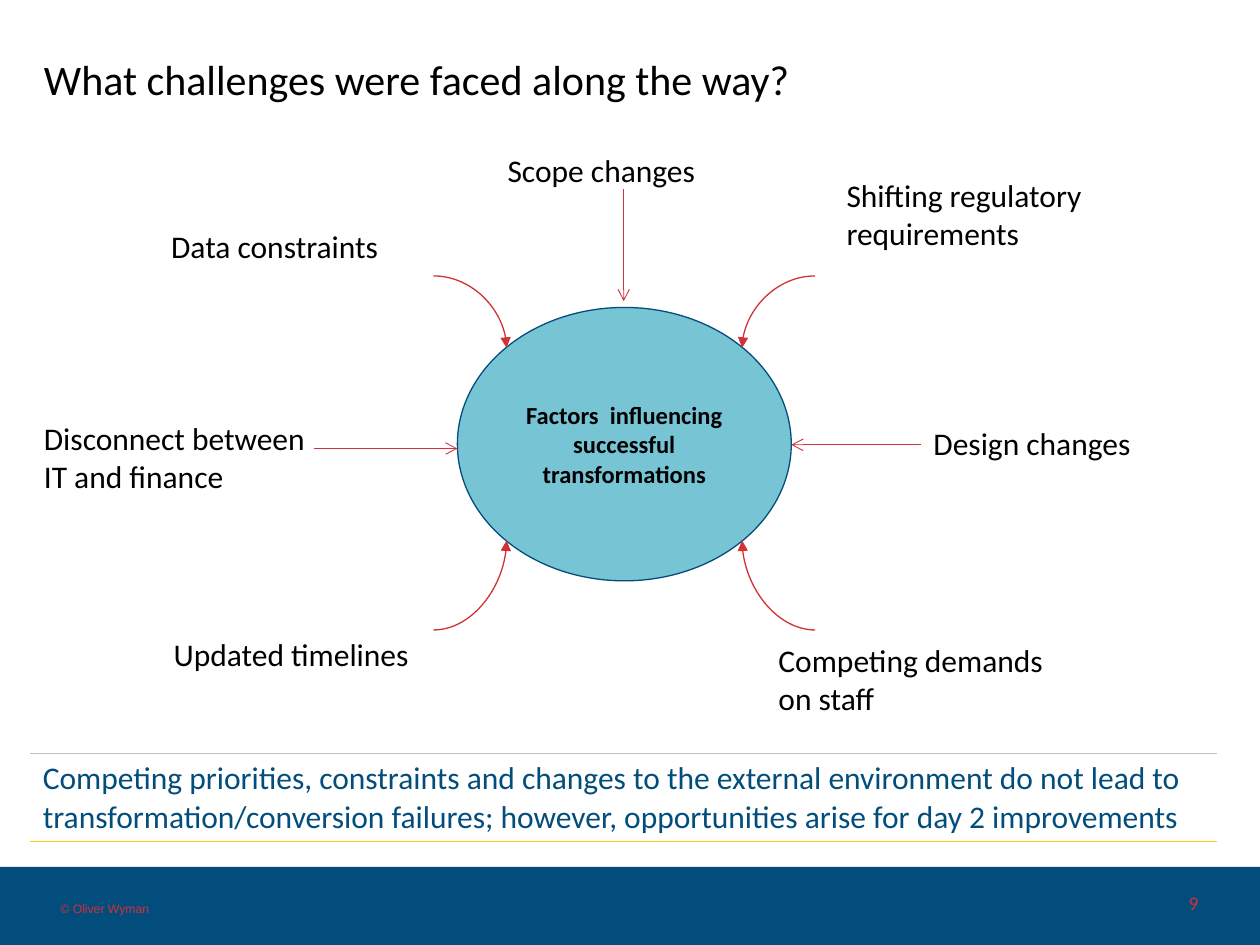
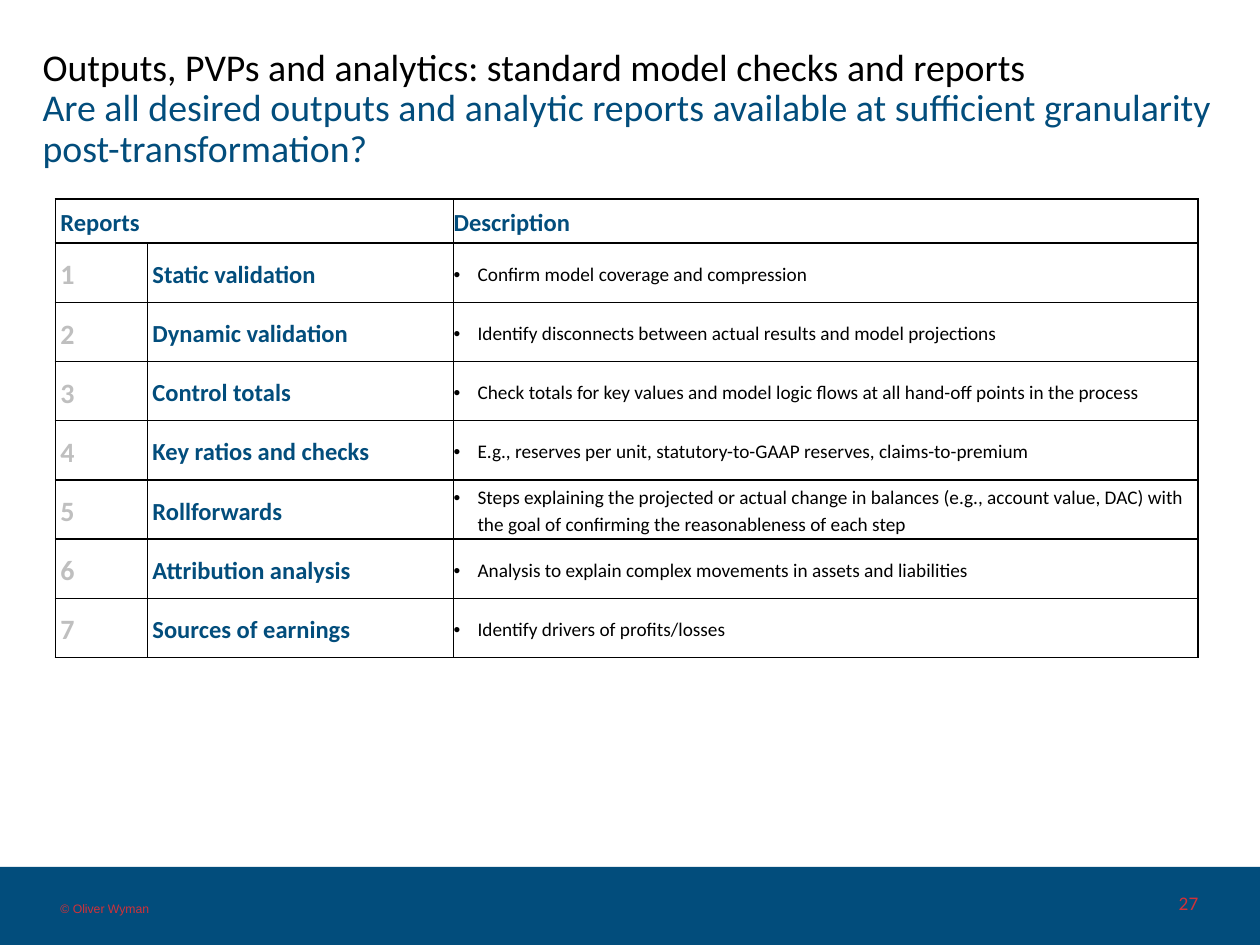
from lxml.etree import SubElement
from pptx import Presentation
from pptx.dml.color import RGBColor
from pptx.enum.shapes import MSO_CONNECTOR, MSO_SHAPE
from pptx.enum.text import MSO_ANCHOR, PP_ALIGN
from pptx.oxml.ns import qn
from pptx.util import Inches, Pt

COLORS = {
    "black": "000000", "navy": "024D7C", "teal": "77C4D5", "red": "D23138",
    "gray": "BFBFBF", "yellow": "FDCE07",
}
# Each style: font values, colour and paragraph values
STYLES = {
    "title": ({"size": Pt(24)}, "black", {"line_spacing": 0.9}),
    "long title": ({"size": Pt(21.6)}, "black", {"line_spacing": 0.9}),
    "subtitle": ({"size": Pt(21.6)}, "navy", {"line_spacing": 0.9}),
    "label": ({"size": Pt(18)}, "black", {}),
    "takeaway": ({"size": Pt(18)}, "navy", {}),
    "hub": ({"size": Pt(14), "bold": True}, "black", {"alignment": PP_ALIGN.CENTER}),
    "page": ({"size": Pt(11)}, "red", {"alignment": PP_ALIGN.RIGHT}),
    "copyright": ({"size": Pt(7), "name": "Arial"}, "red", {}),
    "heading": ({"size": Pt(14), "bold": True}, "navy", {"line_spacing": 1.15}),
    "number": ({"size": Pt(16), "bold": True}, "gray",
               {"line_spacing": 1.15, "space_before": Pt(2), "space_after": Pt(2)}),
    "bullet": ({"size": Pt(11)}, "black", {"line_spacing": 1.15}),
}
SIDES = ("left", "top", "right", "bottom")


def rgb(color):
    return RGBColor.from_string(COLORS[color])


def set_all(obj, values):
    for name, value in values.items():
        setattr(obj, name, value)


class Deck:
    def __init__(self):
        self.prs = Presentation()
        self.prs.slide_width, self.prs.slide_height = Inches(10), Inches(7.5)
        self.s = None

    def slide(self, number):
        self.s = self.prs.slides.add_slide(self.prs.slide_layouts[6])
        # Footer band, page number and copyright
        self.shape(MSO_SHAPE.RECTANGLE, (0, 6.88, 10, 0.62), "navy")
        self.text((8.89, 7.08, 0.62, 0.18), [(number, "page")], MSO_ANCHOR.BOTTOM, 0)
        self.text((0.48, 7.15, 0.75, 0.12), [("© Oliver Wyman", "copyright")],
                  MSO_ANCHOR.BOTTOM, 0, wrap=False)

    def fill_text(self, tf, runs):
        p = tf.paragraphs[0]
        set_all(p, STYLES[runs[0][1]][2])
        for i, (text, style) in enumerate(runs):
            if i:
                p.add_line_break()
            r = p.add_run()
            r.text = text
            font, color, _ = STYLES[style]
            set_all(r.font, {"name": "Calibri", "bold": False, **font})
            r.font.color.rgb = rgb(color)
        return p

    def text(self, box, runs, anchor=MSO_ANCHOR.TOP, inset=None, wrap=True):
        tf = self.s.shapes.add_textbox(*map(Inches, box)).text_frame
        set_all(tf, {"word_wrap": wrap, "vertical_anchor": anchor})
        if inset is not None:
            set_all(tf, {f"margin_{side}": Inches(inset) for side in SIDES})
        self.fill_text(tf, runs)

    def shape(self, kind, box, fill, line=None):
        sp = self.s.shapes.add_shape(kind, *map(Inches, box))
        sp.shadow.inherit = False
        sp.fill.solid()
        sp.fill.fore_color.rgb = rgb(fill)
        if line:
            sp.line.color.rgb, sp.line.width = rgb(line), Pt(0.75)
        else:
            sp.line.fill.background()
        return sp

    def arrow(self, start, end, head="arrow", width=0.5, hub=None, site=None):
        """Straight arrow, or a quarter curve glued to a site of the hub."""
        kind = MSO_CONNECTOR.CURVE if hub else MSO_CONNECTOR.STRAIGHT
        cx = self.s.shapes.add_connector(kind, *map(Inches, start + end))
        cx.line.color.rgb, cx.line.width = rgb("red"), Pt(width)
        spPr = cx._element.spPr
        SubElement(spPr.find(qn("a:ln")), qn("a:tailEnd"), type=head)
        SubElement(spPr, qn("a:effectLst"))
        if hub:
            spPr.find(qn("a:prstGeom")).set("prst", "curvedConnector2")
            SubElement(cx._element.nvCxnSpPr.cNvCxnSpPr, qn("a:endCxn"),
                       id=str(hub.shape_id), idx=str(site))

    def table(self, origin, widths, heights):
        frame = self.s.shapes.add_table(len(heights), len(widths), *map(Inches, origin),
                                        Inches(sum(widths)), Inches(sum(heights)))
        tbl = frame.table
        set_all(tbl, {"first_row": False, "horz_banding": False})
        for col, width in zip(tbl.columns, widths):
            col.width = Inches(width)
        for row, height in zip(tbl.rows, heights):
            row.height = Inches(height)
        return tbl

    def borders(self, cell, lines):
        """Lines are (colour, points) or None for left, right, top, bottom."""
        tcPr = cell._tc.get_or_add_tcPr()
        for side, line in zip("LRTB", lines):
            color, width = line or (None, 0)
            ln = SubElement(tcPr, qn(f"a:ln{side}"), w=str(Pt(width)))
            if color:
                fill = SubElement(ln, qn("a:solidFill"))
                SubElement(fill, qn("a:srgbClr"), val=COLORS[color])
            else:
                SubElement(ln, qn("a:noFill"))

    def cell(self, cell, text, style, lines, margins=None):
        self.borders(cell, lines)
        cell.fill.background()
        cell.vertical_anchor = MSO_ANCHOR.MIDDLE
        if margins:
            set_all(cell, {f"margin_{side}": Inches(m) for side, m in zip(SIDES, margins)})
        p = self.fill_text(cell.text_frame, [(text, style)])
        if style == "bullet":
            pPr = p._p.get_or_add_pPr()
            pPr.set("marL", str(Inches(0.19)))
            pPr.set("indent", str(-Inches(0.19)))
            SubElement(pPr, qn("a:buFont"), typeface="Arial")
            SubElement(pPr, qn("a:buChar"), char="•")


def challenges(deck):
    deck.slide("9")
    deck.text((0.25, 0.42, 8.62, 0.83),
              [("What challenges were faced along the way?", "title")])

    # Hub
    hub = deck.shape(MSO_SHAPE.OVAL, (3.63, 2.44, 2.65, 2.17), "teal", "navy")
    tf = hub.text_frame
    set_all(tf, {"word_wrap": True, "vertical_anchor": MSO_ANCHOR.MIDDLE})
    set_all(tf, {f"margin_{side}": 0 for side in SIDES})
    deck.fill_text(tf, [("Factors  influencing successful transformations", "hub")])

    # Curved arrows into the four diagonal sites
    top, bottom = (2.19, 2.76), (5, 4.29)
    left, right = (3.44, 4.02), (6.47, 5.89)
    corners = [(left, top, 1), (right, top, 7), (left, bottom, 3), (right, bottom, 5)]
    for (x1, x2), (y1, y2), site in corners:
        deck.arrow((x1, y1), (x2, y2), "triangle", 0.75, hub, site)

    # Straight arrows
    for start, end in [((4.95, 1.5), (4.95, 2.39)), ((7.31, 3.53), (6.28, 3.53)),
                       ((2.49, 3.56), (3.63, 3.56))]:
        deck.arrow(start, end)

    # Factor labels
    for x, y, height, text in [
        (1.26, 1.75, 0.4, "Data constraints"),
        (1.28, 4.99, 0.4, "Updated timelines"),
        (6.08, 5.04, 0.71, "Competing demands on staff"),
        (3.93, 1.15, 0.4, "Scope changes"),
        (6.62, 1.35, 0.71, "Shifting regulatory requirements"),
        (7.31, 3.32, 0.4, "Design changes"),
        (0.25, 3.28, 0.71, "Disconnect between IT and finance"),
    ]:
        deck.text((x, y, 2.35, height), [(text, "label")])

    # Takeaway
    tbl = deck.table((0.24, 5.98), [9.42], [0.7])
    deck.cell(tbl.cell(0, 0),
              "Competing priorities, constraints and changes to the external environment "
              "do not lead to transformation/conversion failures; however, opportunities "
              "arise for day 2 improvements",
              "takeaway", [None, None, ("gray", 0.5), ("yellow", 1)])


def reports(deck):
    deck.slide("27")
    deck.text((0.24, 0.42, 9.5, 0.9), [
        ("Outputs, PVPs and analytics: standard model checks and reports", "long title"),
        ("Are all desired outputs and analytic reports available at sufficient "
         "granularity post-transformation?", "subtitle"),
    ], MSO_ANCHOR.MIDDLE)

    # Report table
    rows = [
        ("Static validation", "Confirm model coverage and compression"),
        ("Dynamic validation",
         "Identify disconnects between actual results and model projections"),
        ("Control totals", "Check totals for key values and model logic flows at all "
         "hand-off points in the process"),
        ("Key ratios and checks",
         "E.g., reserves per unit, statutory-to-GAAP reserves, claims-to-premium"),
        ("Rollforwards", "Steps explaining the projected or actual change in balances "
         "(e.g., account value, DAC) with the goal of confirming the reasonableness "
         "of each step"),
        ("Attribution analysis",
         "Analysis to explain complex movements in assets and liabilities"),
        ("Sources of earnings", "Identify drivers of profits/losses"),
    ]
    grid = [("Reports", "", "Description")]
    grid += [(str(i), *row) for i, row in enumerate(rows, 1)]
    tbl = deck.table((0.44, 1.58), [0.73, 2.43, 5.91], [0.35] + [0.47] * len(rows))
    tbl.cell(0, 0).merge(tbl.cell(0, 1))
    lines = [("black", 1)] * 4
    margins = [(0.04,) * 4, (0.04,) * 4, (0, 0, 0.04, 0)]
    for i, texts in enumerate(grid):
        styles = ("number", "heading", "bullet") if i else ("heading",) * 3
        for j, text in enumerate(texts):
            cell = tbl.cell(i, j)
            if cell.is_spanned:
                deck.borders(cell, lines)
            else:
                deck.cell(cell, text, styles[j], lines, margins[j])


def main():
    deck = Deck()
    challenges(deck)
    reports(deck)
    deck.prs.save("out.pptx")


if __name__ == "__main__":
    main()
